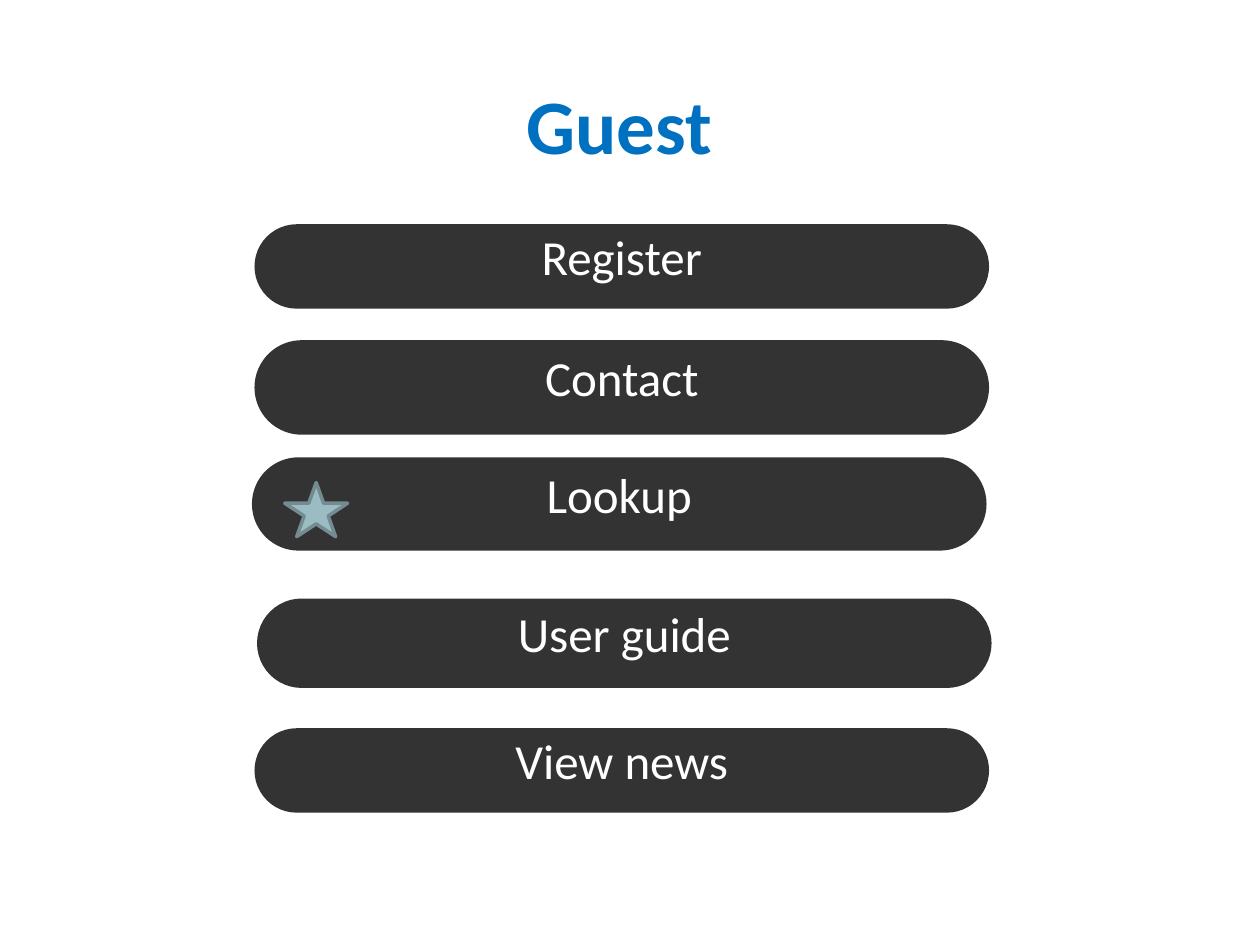
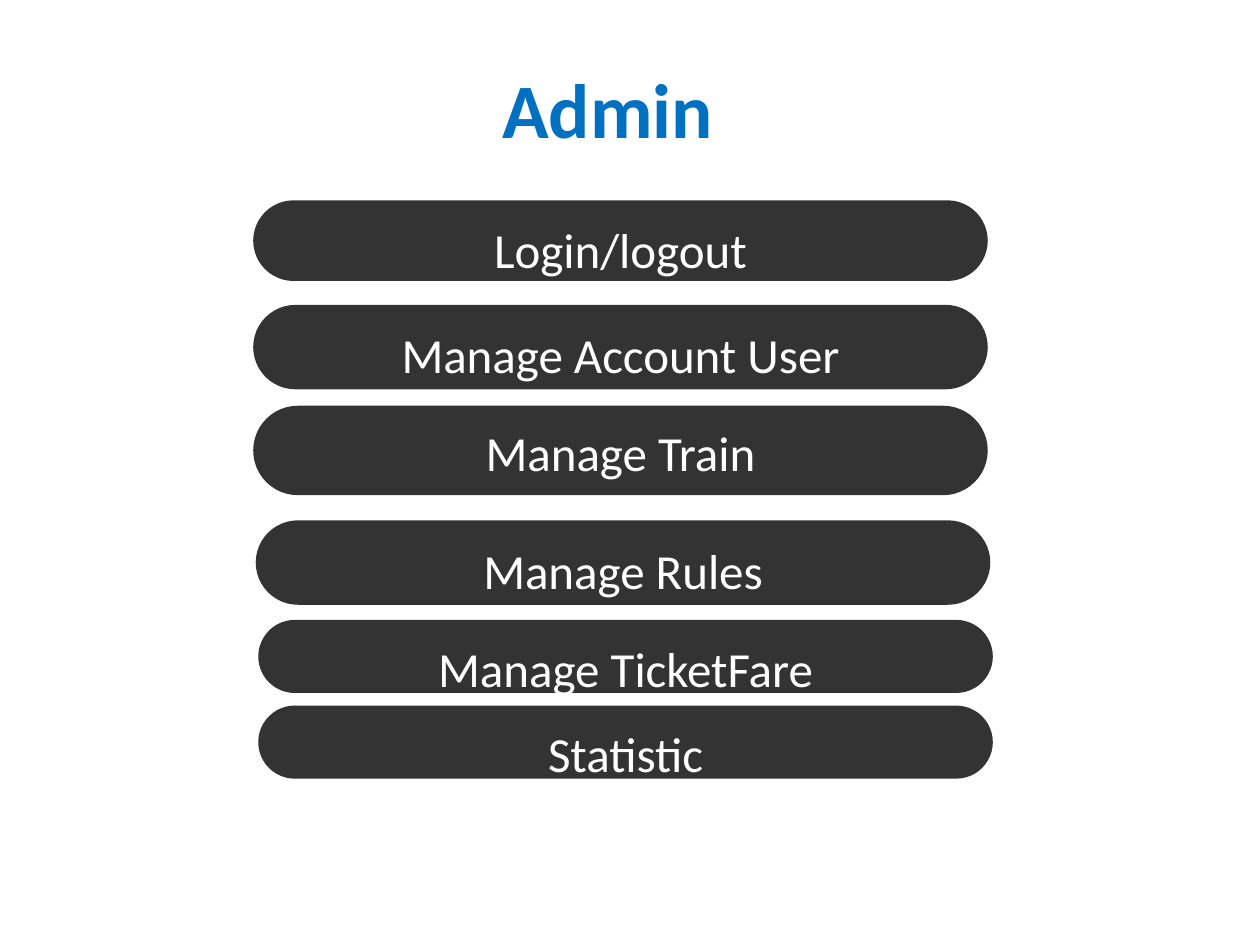
"""Build the two slides that list the functions open to guests and to admins."""
from pptx import Presentation
from pptx.dml.color import RGBColor
from pptx.enum.shapes import MSO_SHAPE
from pptx.enum.text import MSO_ANCHOR, PP_ALIGN
from pptx.util import Inches, Pt

ROUNDED, STAR = MSO_SHAPE.ROUNDED_RECTANGLE, MSO_SHAPE.STAR_5_POINT
TOP, MIDDLE = MSO_ANCHOR.TOP, MSO_ANCHOR.MIDDLE
CENTER = PP_ALIGN.CENTER

FONT = "Calibri"
COLORS = {"title": "0070C0", "bar": "333333", "label": "FFFFFF",
          "star": "9CBCC4", "star_edge": "738B91"}
TITLE_SIZE = (6.13, 0.87)
BAR_WIDTH = 5.83
SIDE_INSET = 0.07

# Each bar: label, left, top, height, text anchor.
ROLES = [
    {"title": "Guest", "title_at": (1.85, 0.55), "insets": (0.04, 0.2),
     "star": (2.26, 3.83, 0.5, 0.43),
     "bars": [("Register", 2.02, 1.78, 0.67, MIDDLE),
              ("Contact", 2.02, 2.7, 0.75, MIDDLE),
              ("Lookup", 2, 3.63, 0.74, MIDDLE),
              ("User guide", 2.04, 4.75, 0.71, MIDDLE),
              ("View news", 2.02, 5.78, 0.67, MIDDLE)]},
    {"title": "Admin", "title_at": (1.76, 0.42), "insets": (0.06, 0.04),
     "star": None,
     "bars": [("Login/logout", 2.01, 1.59, 0.64, TOP),
              ("Manage Account User", 2.01, 2.42, 0.67, TOP),
              ("Manage Train", 2.01, 3.22, 0.71, MIDDLE),
              ("Manage Rules", 2.03, 4.13, 0.67, TOP),
              ("Manage TicketFare", 2.05, 4.92, 0.58, TOP),
              ("Statistic", 2.05, 5.6, 0.58, TOP)]},
]


def color(name):
    return RGBColor.from_string(COLORS[name])


def write(shape, text, size, color_name, anchor, bold=False):
    frame = shape.text_frame
    frame.word_wrap = True
    frame.vertical_anchor = anchor
    para = frame.paragraphs[0]
    para.alignment = CENTER
    span = para.add_run()
    span.text = text
    span.font.name = FONT
    span.font.size = Pt(size)
    span.font.bold = bold
    span.font.color.rgb = color(color_name)


def add_filled(slide, kind, place, fill):
    shape = slide.shapes.add_shape(kind, *map(Inches, place))
    shape.shadow.inherit = False
    shape.fill.solid()
    shape.fill.fore_color.rgb = color(fill)
    return shape


def add_title(slide, text, at):
    box = slide.shapes.add_textbox(*map(Inches, at + TITLE_SIZE))
    write(box, text, 44, "title", MIDDLE, bold=True)


def add_bar(slide, bar, insets):
    label, left, top, height, anchor = bar
    shape = add_filled(slide, ROUNDED, (left, top, BAR_WIDTH, height), "bar")
    shape.adjustments[0] = 0.5
    shape.line.fill.background()
    frame = shape.text_frame
    frame.margin_left = frame.margin_right = Inches(SIDE_INSET)
    frame.margin_top, frame.margin_bottom = map(Inches, insets)
    write(shape, label, 28, "label", anchor)


def add_star(slide, place):
    star = add_filled(slide, STAR, place, "star")
    star.line.color.rgb = color("star_edge")
    star.line.width = Pt(2)


def main():
    deck = Presentation()
    deck.slide_width, deck.slide_height = Inches(10), Inches(7.5)
    for role in ROLES:
        page = deck.slides.add_slide(deck.slide_layouts[6])
        add_title(page, role["title"], role["title_at"])
        for bar in role["bars"]:
            add_bar(page, bar, role["insets"])
        if role["star"]:
            add_star(page, role["star"])
    deck.save("out.pptx")


if __name__ == "__main__":
    main()
